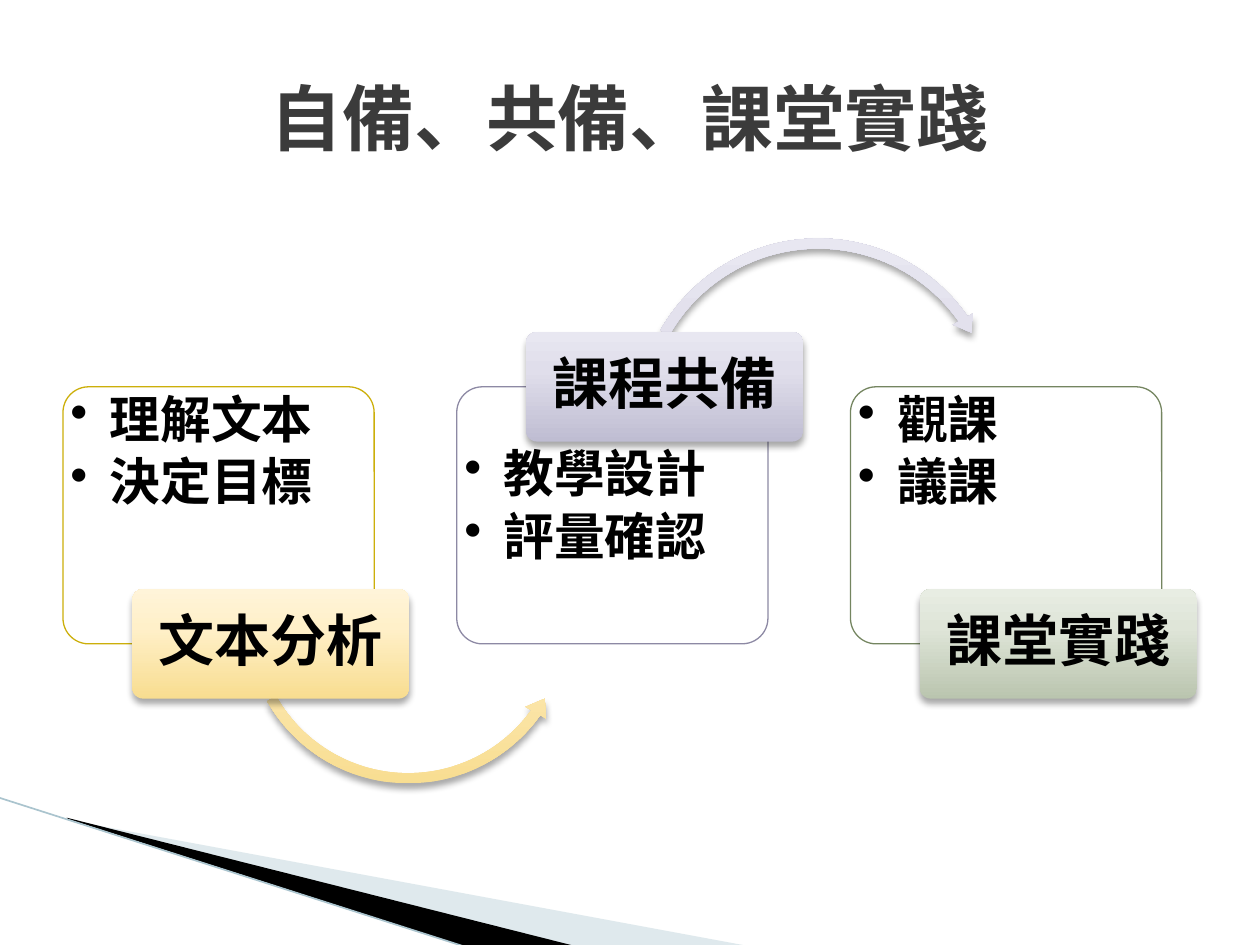
from dataclasses import dataclass

import lxml.etree
import pptx
import pptx.dml.color
import pptx.enum.shapes
import pptx.enum.text
import pptx.oxml
import pptx.oxml.ns
import pptx.util
from pptx.util import Inches

RGBColor = pptx.dml.color.RGBColor
Shapes = pptx.enum.shapes.MSO_SHAPE
Anchor = pptx.enum.text.MSO_ANCHOR
Align = pptx.enum.text.PP_ALIGN
qn = pptx.oxml.ns.qn

BLACK = RGBColor(0x00, 0x00, 0x00)
WHITE = RGBColor(0xFF, 0xFF, 0xFF)
TITLE_GRAY = RGBColor(0x3B, 0x3B, 0x3B)
PALE_BLUE = RGBColor(0xB1, 0xC9, 0xD2)
EDGE_BLUE = RGBColor(0xAA, 0xC4, 0xCE)
GOLD_LINE = RGBColor(0xCC, 0xAF, 0x0A)
VIOLET_LINE = RGBColor(0x8D, 0x89, 0xA4)
GREEN_LINE = RGBColor(0x74, 0x85, 0x60)
GOLD = (RGBColor(0xF8, 0xDD, 0x90), RGBColor(0xFF, 0xF0, 0xC9), RGBColor(0xFF, 0xF4, 0xD9))
VIOLET = (RGBColor(0xBF, 0xBD, 0xD2), RGBColor(0xE0, 0xDE, 0xEB), RGBColor(0xE8, 0xE7, 0xF1))
GREEN = (RGBColor(0xBA, 0xC5, 0xAF), RGBColor(0xDF, 0xE5, 0xD8), RGBColor(0xE8, 0xED, 0xE3))

FONT = "DejaVu Sans Mono"
CARD_LEFT, CARD_TOP, CARD_STEP = 0.5, 3.07, 3.125
CARD_WIDTH, CARD_HEIGHT = 2.47, 2.04
LABEL_WIDTH, LABEL_HEIGHT, LABEL_SHIFT = 2.2, 0.87, 0.55
DETAIL_HEIGHT = 1.6


@dataclass
class Arrow:
    preset: Shapes
    left: float
    top: float
    size: float
    adjustments: tuple[float, ...]


@dataclass
class Stage:
    label: str
    details: tuple[str, ...]
    outline: RGBColor
    gradient: tuple[RGBColor, ...]
    label_on_top: bool = False
    arrow: Arrow | None = None


STAGES = (
    Stage("文本分析", ("理解文本", "決定目標"), GOLD_LINE, GOLD,
          arrow=Arrow(Shapes.LEFT_CIRCULAR_ARROW, 1.9, 3.59, 2.68,
                      (0.03, 3.637, 21.392, 90.245, 0.035))),
    Stage("課程共備", ("教學設計", "評量確認"), VIOLET_LINE, VIOLET, True,
          Arrow(Shapes.CIRCULAR_ARROW, 5, 1.84, 2.99,
                (0.027, 3.23, 195.015, 125.755, 0.031))),
    Stage("課堂實踐", ("觀課", "議課"), GREEN_LINE, GREEN),
)


def fill_solid(shape, color: RGBColor, opacity: int = 100) -> None:
    shape.fill.solid()
    shape.fill.fore_color.rgb = color
    if opacity < 100:
        swatch = shape._element.spPr.find(qn("a:solidFill"))[0]
        lxml.etree.SubElement(swatch, qn("a:alpha"), val=str(opacity * 1000))


def add_preset(page, preset: Shapes, left: float, top: float, width: float,
               height: float, adjustments: tuple[float, ...]):
    shape = page.shapes.add_shape(preset, Inches(left), Inches(top), Inches(width), Inches(height))
    for index, value in enumerate(adjustments):
        shape.adjustments[index] = value
    shape.shadow.inherit = False
    return shape


def style_raised(shape, colors: tuple[RGBColor, ...]) -> None:
    shape.line.fill.background()
    shape.fill.gradient()
    shape.fill.gradient_angle = 90
    properties = shape._element.spPr
    stops = properties.find(qn("a:gradFill")).find(qn("a:gsLst"))
    for stop in list(stops):
        stops.remove(stop)
    for position, color in zip((0, 65, 100), colors):
        stop = lxml.etree.SubElement(stops, qn("a:gs"), pos=str(position * 1000))
        lxml.etree.SubElement(stop, qn("a:srgbClr"), val=str(color))
    shadow = lxml.etree.SubElement(
        properties.find(qn("a:effectLst")), qn("a:outerShdw"),
        blurRad=str(pptx.util.Pt(4)), dist=str(pptx.util.Pt(3)),
        dir="5400000", rotWithShape="0")
    shade = lxml.etree.SubElement(shadow, qn("a:srgbClr"), val=str(BLACK))
    lxml.etree.SubElement(shade, qn("a:alpha"), val="35000")


def set_insets(frame, horizontal: float, vertical: float) -> None:
    frame.word_wrap = True
    frame.margin_left = frame.margin_right = Inches(horizontal)
    frame.margin_top = frame.margin_bottom = Inches(vertical)


def style_text(para, size: float, color: RGBColor = BLACK) -> None:
    para.font.name = FONT
    para.font.size = pptx.util.Pt(size)
    para.font.bold = True
    para.font.color.rgb = color


def add_details(page, details: tuple[str, ...], left: float, top: float) -> None:
    box = page.shapes.add_textbox(Inches(left), Inches(top), Inches(CARD_WIDTH), Inches(DETAIL_HEIGHT))
    frame = box.text_frame
    set_insets(frame, 0.06, 0.06)
    for index, detail in enumerate(details):
        para = frame.add_paragraph() if index else frame.paragraphs[0]
        para.text = detail
        para.level = 1
        para.line_spacing = 0.9
        para.space_after = pptx.util.Pt(4.35)
        properties = para._p.get_or_add_pPr()
        properties.set("marL", str(Inches(0.31)))
        properties.set("indent", str(Inches(-0.31)))
        lxml.etree.SubElement(properties, qn("a:buChar"), char="•")
        style_text(para, 29)


def add_label(page, stage: Stage, left: float, top: float) -> None:
    label = add_preset(page, Shapes.ROUNDED_RECTANGLE, left, top, LABEL_WIDTH, LABEL_HEIGHT, (0.1,))
    style_raised(label, stage.gradient)
    frame = label.text_frame
    set_insets(frame, 0.04, 0.04)
    frame.vertical_anchor = Anchor.MIDDLE
    para = frame.paragraphs[0]
    para.text = stage.label
    para.alignment = Align.CENTER
    para.line_spacing = 0.9
    para.space_after = pptx.util.Pt(11)
    style_text(para, 32)


def add_stage(page, stage: Stage, left: float) -> None:
    card = add_preset(page, Shapes.ROUNDED_RECTANGLE, left, CARD_TOP, CARD_WIDTH, CARD_HEIGHT, (0.1,))
    fill_solid(card, WHITE, 90)
    card.line.color.rgb = stage.outline
    card.line.width = pptx.util.Pt(0.75)
    overlap = LABEL_HEIGHT / 2
    add_details(page, stage.details, left, CARD_TOP + overlap * stage.label_on_top)
    if stage.arrow:
        arrow = stage.arrow
        shape = add_preset(page, arrow.preset, arrow.left, arrow.top, arrow.size, arrow.size,
                           arrow.adjustments)
        style_raised(shape, stage.gradient)
    edge = CARD_TOP if stage.label_on_top else CARD_TOP + CARD_HEIGHT
    add_label(page, stage, left + LABEL_SHIFT, edge - overlap)


def add_wedge(page, points: tuple[tuple[float, float], ...], color: RGBColor, opacity: int) -> None:
    start, *rest = [(Inches(x), Inches(y)) for x, y in points]
    builder = page.shapes.build_freeform(*start)
    builder.add_line_segments(rest, close=True)
    wedge = builder.convert_to_shape()
    wedge.shadow.inherit = False
    wedge.line.fill.background()
    fill_solid(wedge, color, opacity)


def add_corner(page) -> None:
    add_wedge(page, ((0.55, 6.51), (5.95, 7.51), (4.56, 7.51), (0.55, 6.5)), PALE_BLUE, 40)
    add_wedge(page, ((0.53, 6.49), (4.57, 7.51), (3.72, 7.52), (0.54, 6.5)), BLACK, 100)
    edge = page.shapes.add_connector(pptx.enum.shapes.MSO_CONNECTOR.STRAIGHT, Inches(-0.01),
                                     Inches(6.33), Inches(3.71), Inches(7.52))
    edge.line.color.rgb = EDGE_BLUE
    edge.line.width = pptx.util.Pt(0.95)
    lxml.etree.SubElement(edge._element.spPr, qn("a:effectLst"))


def set_title(page) -> None:
    title = page.shapes.title
    title.left, title.top, title.width, title.height = map(Inches, (0.5, 0.3, 9, 1.25))
    title.text_frame.vertical_anchor = Anchor.MIDDLE
    para = title.text_frame.paragraphs[0]
    para.text = "自備、共備、課堂實踐"
    para.alignment = Align.CENTER
    style_text(para, 41, TITLE_GRAY)


def main() -> None:
    deck = pptx.Presentation()
    deck.slide_width, deck.slide_height = Inches(10), Inches(7.5)
    page = deck.slides.add_slide(deck.slide_layouts[5])
    set_title(page)
    add_corner(page)
    for index, stage in enumerate(STAGES):
        add_stage(page, stage, CARD_LEFT + index * CARD_STEP)
    deck.save("out.pptx")


if __name__ == "__main__":
    main()
